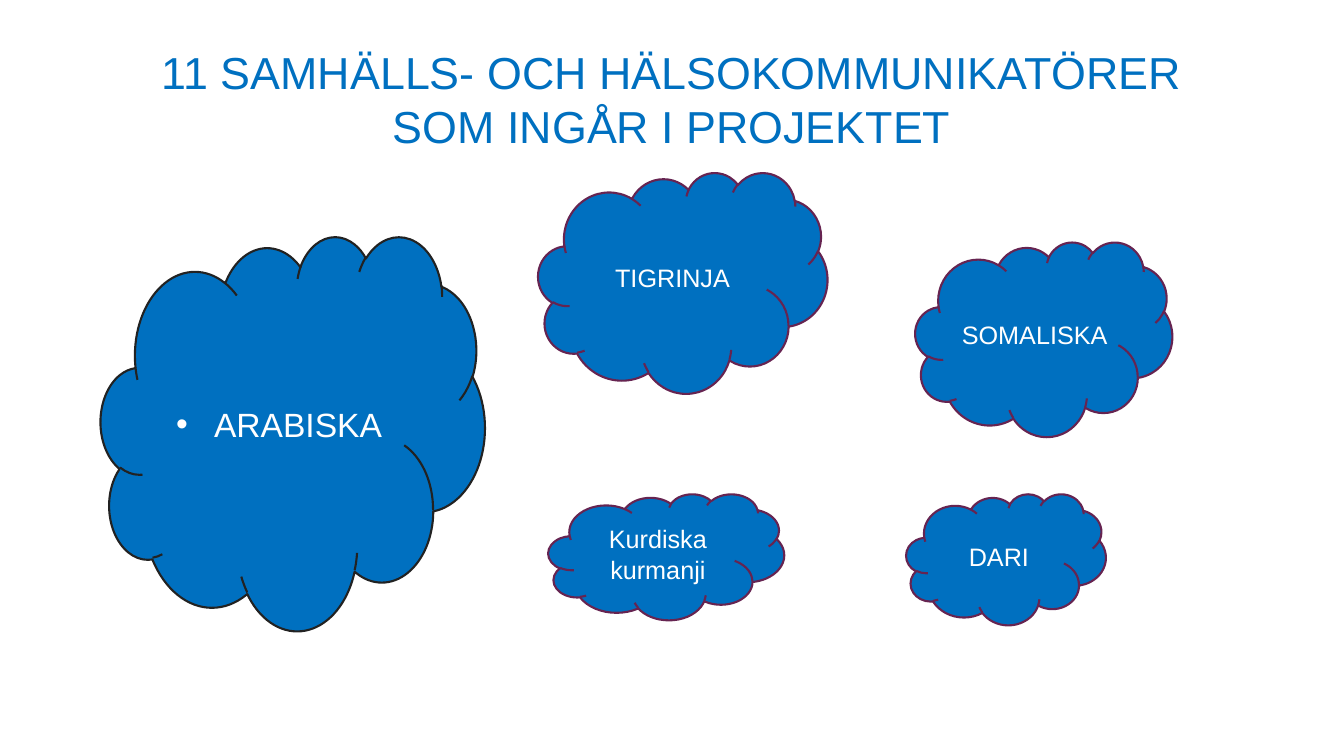
from lxml import etree
from pptx import Presentation
from pptx.dml.color import RGBColor
from pptx.enum.shapes import MSO_SHAPE
from pptx.enum.text import MSO_ANCHOR, PP_ALIGN
from pptx.oxml.ns import qn
from pptx.util import Pt

BLUE = RGBColor(0x00, 0x70, 0xC0)
WHITE = RGBColor(0xFF, 0xFF, 0xFF)
PLUM = RGBColor(0x66, 0x24, 0x51)
CHARCOAL = RGBColor(0x22, 0x22, 0x22)
CLOUD = MSO_SHAPE.CLOUD
MIDDLE = MSO_ANCHOR.MIDDLE
CENTER = PP_ALIGN.CENTER


def write(shape, text, size, color, bulleted=False):
    frame = shape.text_frame
    frame.word_wrap = True
    frame.vertical_anchor = MIDDLE
    paragraph = frame.paragraphs[0]
    paragraph.text = text
    paragraph.alignment = CENTER
    if bulleted:
        properties = paragraph._p.get_or_add_pPr()
        properties.set("marL", str(Pt(27)))
        properties.set("indent", str(Pt(-27)))
        etree.SubElement(properties, qn("a:buFont")).set("typeface", "Arial")
        etree.SubElement(properties, qn("a:buChar")).set("char", "•")
    paragraph.font.name = "Arial"
    paragraph.font.size = Pt(size)
    paragraph.font.color.rgb = color


presentation = Presentation()
presentation.slide_width = Pt(960)
presentation.slide_height = Pt(540)
slide = presentation.slides.add_slide(presentation.slide_layouts[6])

# Heading
heading = slide.shapes.add_textbox(Pt(72), Pt(25.2), Pt(816), Pt(90))
write(heading, "11 SAMHÄLLS- OCH HÄLSOKOMMUNIKATÖRER SOM INGÅR I PROJEKTET", 32, BLUE)

# One cloud per language: name, left, top, width, height, text size, outline
languages = [
    ("ARABISKA", 72, 168.5, 274.3, 281.5, 24, CHARCOAL),
    ("TIGRINJA", 384.5, 123.1, 206.6, 157.7, 18, PLUM),
    ("Kurdiska kurmanji", 391.7, 352.8, 168.5, 90, 18, PLUM),
    ("SOMALISKA", 653.8, 172.8, 183.6, 139, 18, PLUM),
    ("DARI", 647.3, 352.8, 142.6, 93.6, 18, PLUM),
]
for name, left, top, width, height, size, outline in languages:
    cloud = slide.shapes.add_shape(CLOUD, Pt(left), Pt(top), Pt(width), Pt(height))
    cloud.shadow.inherit = False
    cloud.fill.solid()
    cloud.fill.fore_color.rgb = BLUE
    cloud.line.color.rgb = outline
    cloud.line.width = Pt(1.5)
    write(cloud, name, size, WHITE, bulleted=name == "ARABISKA")

presentation.save("out.pptx")
